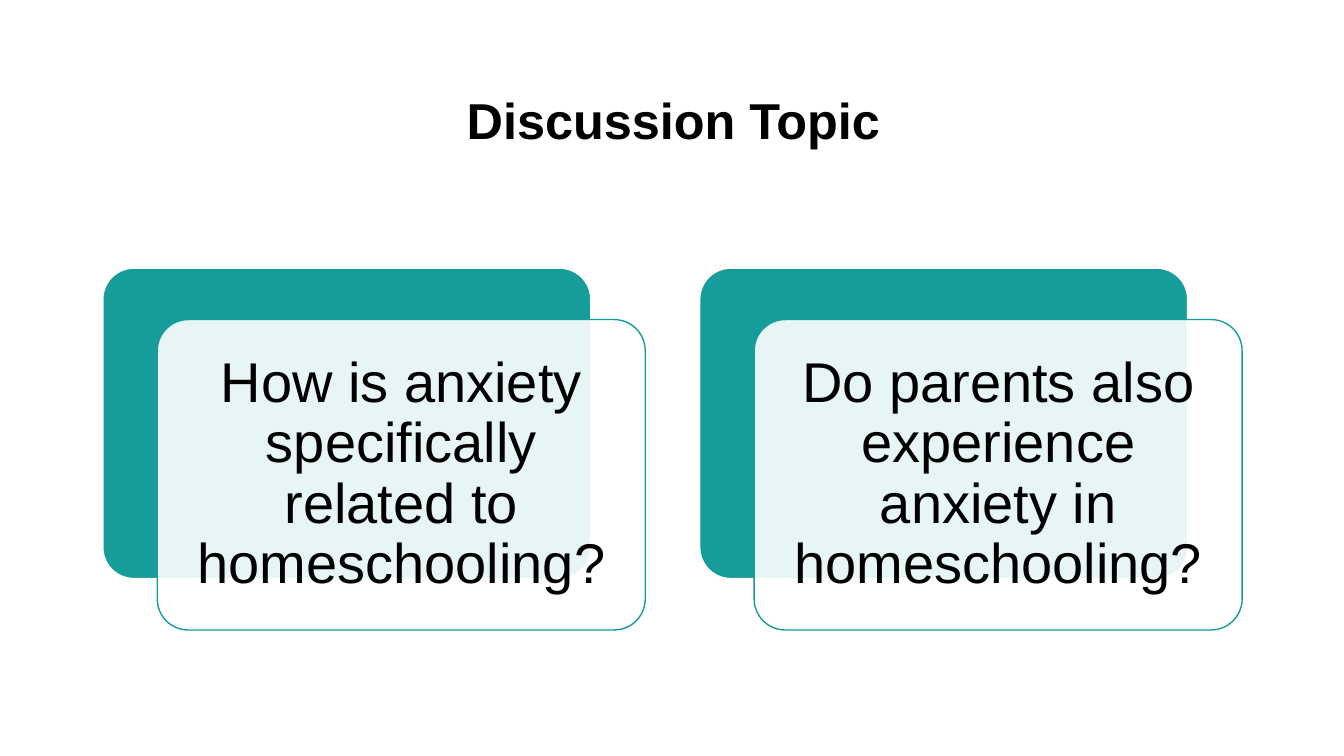
import lxml.etree
import pptx
import pptx.dml.color
import pptx.enum.shapes
import pptx.enum.text
import pptx.oxml.ns
import pptx.util
from pptx.util import Inches

BLACK = pptx.dml.color.RGBColor(0x00, 0x00, 0x00)
WHITE = pptx.dml.color.RGBColor(0xFF, 0xFF, 0xFF)
TEAL = pptx.dml.color.RGBColor(0x16, 0x9C, 0x9A)

QUESTIONS = [
    "How is anxiety specifically related to homeschooling?",
    "Do parents also experience anxiety in homeschooling?",
]
CARD_LEFT, CARD_TOP, CARD_PITCH = 1.02, 2.66, 5.92
PANEL_WIDTH, PANEL_HEIGHT = 4.84, 3.08
PANEL_SHIFT_X, PANEL_SHIFT_Y = 0.54, 0.51
TEXT_MARGIN = 0.09


def add_text(slide, text, left, top, width, height, size, bold=False, inset=0.1):
    """Add a centred, wrapped text box."""
    box = slide.shapes.add_textbox(Inches(left), Inches(top), Inches(width), Inches(height))
    frame = box.text_frame
    frame.word_wrap = True
    frame.vertical_anchor = pptx.enum.text.MSO_ANCHOR.MIDDLE
    frame.margin_left = frame.margin_right = Inches(inset)
    frame.margin_top = frame.margin_bottom = Inches(inset)
    paragraph = frame.paragraphs[0]
    paragraph.alignment = pptx.enum.text.PP_ALIGN.CENTER
    paragraph.line_spacing = 0.9
    run = paragraph.add_run()
    run.text = text
    run.font.name = "Arial"
    run.font.size = pptx.util.Pt(size)
    run.font.bold = bold
    run.font.color.rgb = BLACK


def add_panel(slide, left, top, fill, line, opacity=100):
    """Add one rounded panel of a card."""
    panel = slide.shapes.add_shape(
        pptx.enum.shapes.MSO_SHAPE.ROUNDED_RECTANGLE,
        Inches(left), Inches(top), Inches(PANEL_WIDTH), Inches(PANEL_HEIGHT))
    panel.adjustments[0] = 0.1
    panel.shadow.inherit = False
    panel.fill.solid()
    panel.fill.fore_color.rgb = fill
    panel.line.color.rgb = line
    panel.line.width = pptx.util.Pt(1)
    if opacity < 100:
        color = panel.fill._xPr.find(".//" + pptx.oxml.ns.qn("a:srgbClr"))
        alpha = lxml.etree.SubElement(color, pptx.oxml.ns.qn("a:alpha"))
        alpha.set("val", str(opacity * 1000))


def add_question_card(slide, question, left, top):
    """Add a teal panel with a translucent question panel shifted over it."""
    add_panel(slide, left, top, TEAL, WHITE)
    front_left, front_top = left + PANEL_SHIFT_X, top + PANEL_SHIFT_Y
    add_panel(slide, front_left, front_top, WHITE, TEAL, opacity=90)
    add_text(slide, question, front_left + TEXT_MARGIN, front_top + TEXT_MARGIN,
             PANEL_WIDTH - 2 * TEXT_MARGIN, PANEL_HEIGHT - 2 * TEXT_MARGIN,
             size=40, inset=0.17)


def main():
    """Build and save the slide."""
    presentation = pptx.Presentation()
    presentation.slide_width = Inches(13.33)
    presentation.slide_height = Inches(7.5)
    slide = presentation.slides.add_slide(presentation.slide_layouts[6])
    add_text(slide, "Discussion Topic", 1.67, 0.6, 10.02, 1.24, size=36, bold=True)
    for index, question in enumerate(QUESTIONS):
        add_question_card(slide, question, CARD_LEFT + index * CARD_PITCH, CARD_TOP)
    presentation.save("out.pptx")


if __name__ == "__main__":
    main()
